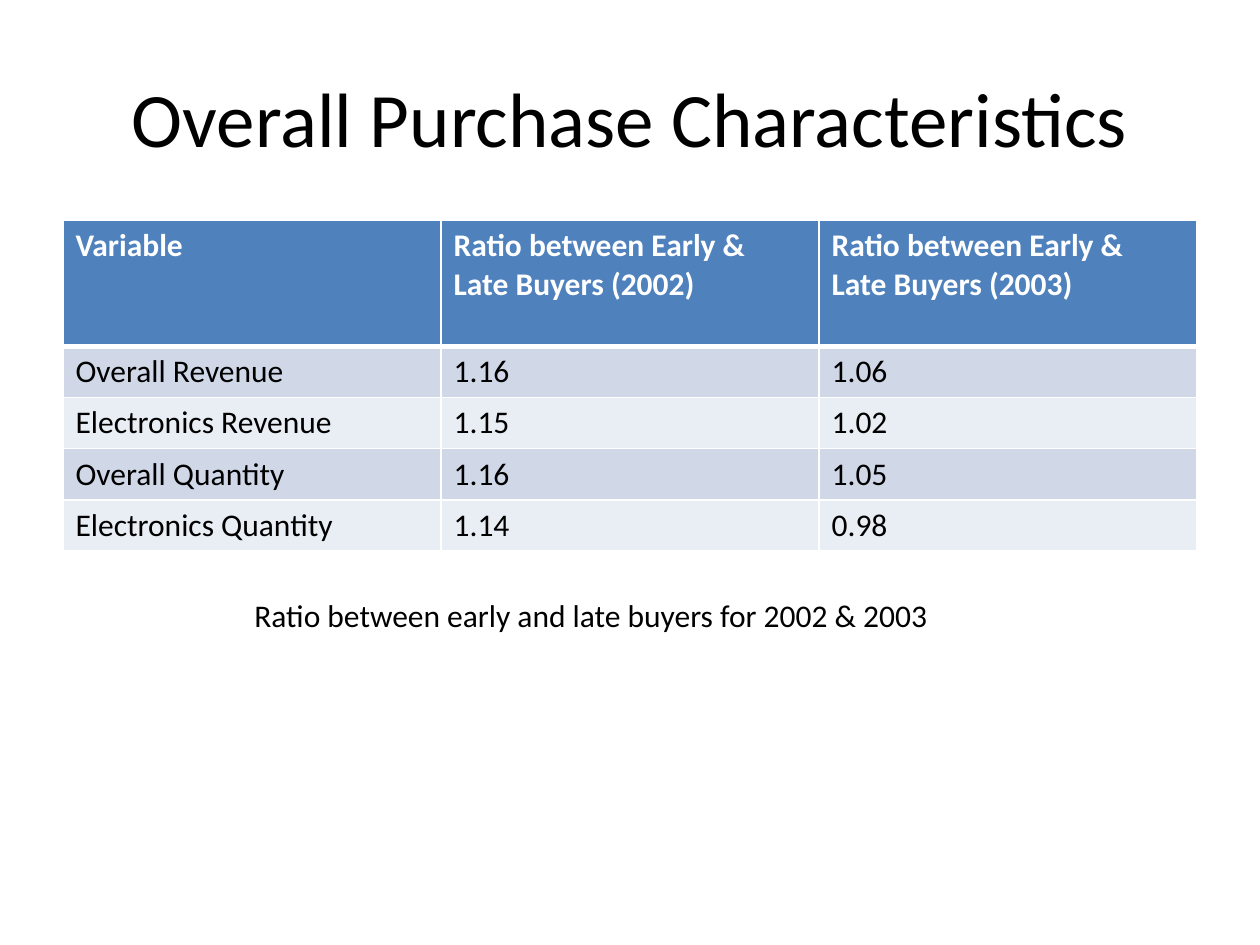
from lxml.etree import SubElement
from pptx import Presentation
from pptx.dml.color import RGBColor
from pptx.enum.text import MSO_ANCHOR, PP_ALIGN
from pptx.oxml.ns import qn
from pptx.util import Pt

BLACK = RGBColor(0x00, 0x00, 0x00)
WHITE = RGBColor(0xFF, 0xFF, 0xFF)
HEADER_BLUE = RGBColor(0x4F, 0x81, 0xBD)
BAND_DARK = RGBColor(0xD0, 0xD8, 0xE8)
BAND_LIGHT = RGBColor(0xE9, 0xED, 0xF4)

HEADER_HEIGHT = 72
ROW_HEIGHT = 29.2
COLUMN_WIDTH = 216

RATIOS = [
    ("Variable", "Ratio between Early & Late Buyers (2002)",
     "Ratio between Early & Late Buyers (2003)"),
    ("Overall Revenue", "1.16", "1.06"),
    ("Electronics Revenue", "1.15", "1.02"),
    ("Overall Quantity", "1.16", "1.05"),
    ("Electronics Quantity", "1.14", "0.98"),
]


def write_text(frame, text, size=18, color=BLACK, bold=False, align=PP_ALIGN.LEFT):
    frame.word_wrap = True
    paragraph = frame.paragraphs[0]
    paragraph.alignment = align
    run = paragraph.add_run()
    run.text = text
    run.font.name = "Calibri"
    run.font.size = Pt(size)
    run.font.bold = bold
    run.font.color.rgb = color


def set_borders(cell, top, bottom):
    properties = cell._tc.get_or_add_tcPr()
    for side, width in (("L", 1), ("R", 1), ("T", top), ("B", bottom)):
        border = SubElement(properties, qn(f"a:ln{side}"), w=str(Pt(width)))
        fill = SubElement(border, qn("a:solidFill"))
        SubElement(fill, qn("a:srgbClr"), val=str(WHITE))


def add_title(slide, text):
    title = slide.shapes.title
    title.left, title.top, title.width, title.height = Pt(36), Pt(21.6), Pt(648), Pt(90)
    title.text_frame.vertical_anchor = MSO_ANCHOR.MIDDLE
    write_text(title.text_frame, text, size=44, align=PP_ALIGN.CENTER)


def add_ratio_table(slide, ratios):
    row_count, column_count = len(ratios), len(ratios[0])
    table = slide.shapes.add_table(
        row_count, column_count, Pt(36), Pt(126), Pt(COLUMN_WIDTH * column_count),
        Pt(HEADER_HEIGHT + ROW_HEIGHT * (row_count - 1))).table
    for column in table.columns:
        column.width = Pt(COLUMN_WIDTH)
    for index, values in enumerate(ratios):
        is_header = index == 0
        table.rows[index].height = Pt(HEADER_HEIGHT if is_header else ROW_HEIGHT)
        band = BAND_DARK if index % 2 else BAND_LIGHT
        for cell, value in zip(table.rows[index].cells, values):
            set_borders(cell, top=3 if index == 1 else 1, bottom=3 if is_header else 1)
            cell.fill.solid()
            cell.fill.fore_color.rgb = HEADER_BLUE if is_header else band
            write_text(cell.text_frame, value, bold=is_header,
                       color=WHITE if is_header else BLACK)


def add_caption(slide, text):
    caption = slide.shapes.add_textbox(Pt(138.24), Pt(336.96), Pt(444.96), Pt(28.8))
    write_text(caption.text_frame, text)


def main():
    presentation = Presentation()
    presentation.slide_width, presentation.slide_height = Pt(720), Pt(540)
    slide = presentation.slides.add_slide(presentation.slide_layouts.get_by_name("Title Only"))
    add_title(slide, "Overall Purchase Characteristics")
    add_ratio_table(slide, RATIOS)
    add_caption(slide, "Ratio between early and late buyers for 2002 & 2003")
    presentation.save("out.pptx")


if __name__ == "__main__":
    main()
